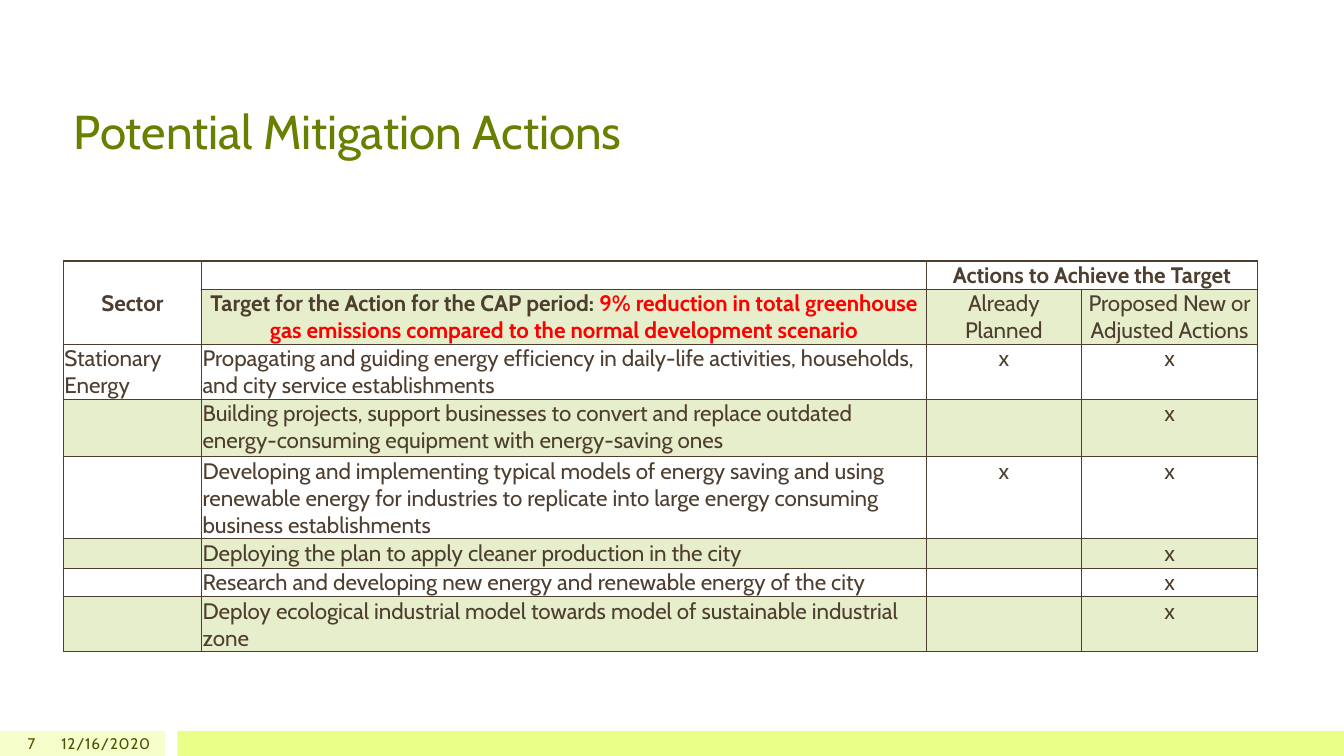
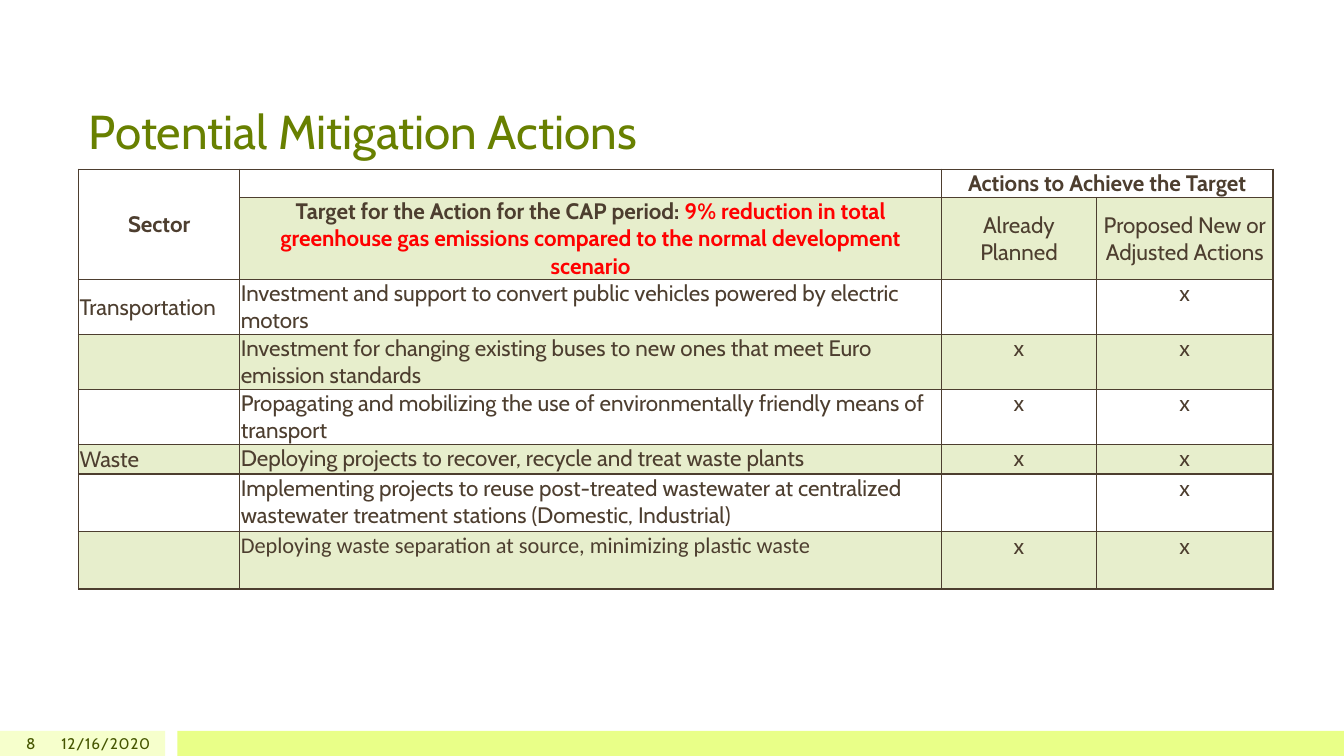
from lxml import etree
from pptx import Presentation
from pptx import util as u
from pptx.dml import color
from pptx.enum import shapes, text
from pptx.oxml import ns

UNIT = 190500
COLUMNS, ROWS = 64, 36
FOOTER_TOP, FOOTER_HEIGHT = 34.8, 1.2
TABLE_WIDTH, PLANNED_WIDTH, PROPOSED_WIDTH = 56.88, 7.39, 8.4
LINE_1, LINE_1_LOOSE, LINE_2, LINE_2_LOOSE, LINE_3 = 1.34, 1.42, 2.62, 2.74, 3.9
LEFT, CENTER, RIGHT = text.PP_ALIGN.LEFT, text.PP_ALIGN.CENTER, text.PP_ALIGN.RIGHT
TOP, MIDDLE, BOTTOM = text.MSO_ANCHOR.TOP, text.MSO_ANCHOR.MIDDLE, text.MSO_ANCHOR.BOTTOM

COLORS = {
    "title": "688000", "footer": "455500", "body": "4D3E2F", "target": "FF0000",
    "band": "8BAA00", "paper": "FFFFFF", "date_bar": "F6FFCC", "footer_bar": "E9FF88",
}

TARGET = [
    ("Target for the Action for the CAP period: ", "body"),
    ("9% reduction in total greenhouse gas emissions compared to the normal development scenario", "target"),
]

ENERGY = [
    ("Stationary Energy", "Propagating and guiding energy efficiency in daily-life activities, households, and city service establishments", "x", LINE_2, {}),
    ("", "Building projects, support businesses to convert and replace outdated energy-consuming equipment with energy-saving ones", "", LINE_2_LOOSE, {}),
    ("", "Developing and implementing typical models of energy saving and using renewable energy for industries to replicate into large energy consuming business establishments", "x", LINE_3, {}),
    ("", "Deploying the plan to apply cleaner production in the city", "", LINE_1_LOOSE, {}),
    ("", "Research and developing new energy and renewable energy of the city", "", LINE_1, {"anchor": BOTTOM}),
    ("", "Deploy ecological industrial model towards model of sustainable industrial zone", "", LINE_2, {}),
]

TRANSPORT_AND_WASTE = [
    ("Transportation", "Investment and support to convert public vehicles powered by electric motors", "", LINE_2, {}),
    ("", "Investment for changing existing buses to new ones that meet Euro emission standards", "x", LINE_2, {}),
    ("", "Propagating and mobilizing the use of environmentally friendly means of transport", "x", LINE_2, {}),
    ("Waste", "Deploying projects to recover, recycle and treat waste plants", "x", LINE_1_LOOSE, {}),
    ("", "Implementing projects to reuse post-treated wastewater at centralized wastewater treatment stations (Domestic, Industrial)", "", LINE_2_LOOSE, {}),
    ("", "Deploying waste separation at source, minimizing plastic waste", "x", LINE_2_LOOSE, {"font": "Calibri"}),
]


def grid(*lengths):
    return [u.Emu(round(length * UNIT)) for length in lengths]


def rgb(name):
    return color.RGBColor.from_string(COLORS[name])


class Deck:
    """Holds the shared style and the slide being built."""

    def __init__(self):
        self.prs = Presentation()
        self.prs.slide_width, self.prs.slide_height = grid(COLUMNS, ROWS)
        self.slide = None

    def new_slide(self, number, date):
        self.slide = self.prs.slides.add_slide(self.prs.slide_layouts[5])
        self.bar(0, 7.87, "date_bar")
        self.bar(8.45, COLUMNS - 8.45, "footer_bar")
        self.footer(0, 2.16, number)
        self.footer(2.4, 5.23, date)

    def style(self, run, size, shade, font="Cabin", bold=False):
        run.font.size, run.font.name, run.font.bold = u.Pt(size), font, bold
        run.font.color.rgb = rgb(shade)

    def bar(self, left, width, shade):
        bar = self.slide.shapes.add_shape(
            shapes.MSO_SHAPE.RECTANGLE, *grid(left, FOOTER_TOP, width, FOOTER_HEIGHT))
        bar.shadow.inherit = False
        bar.fill.solid()
        bar.fill.fore_color.rgb = rgb(shade)
        bar.line.fill.background()

    def footer(self, left, width, words):
        frame = self.slide.shapes.add_textbox(
            *grid(left, FOOTER_TOP, width, FOOTER_HEIGHT)).text_frame
        frame.word_wrap = True
        frame.vertical_anchor = MIDDLE
        frame.margin_top = frame.margin_bottom = 0
        frame.text = words
        paragraph = frame.paragraphs[0]
        paragraph.alignment = RIGHT
        self.style(paragraph.runs[0], 11, "footer")
        paragraph.runs[0]._r.get_or_add_rPr().set("spc", "50")

    def title(self, left, words):
        title = self.slide.shapes.title
        title.left, title.top, title.width, title.height = grid(left, 1.44, 56.62 - left, 6.19)
        frame = title.text_frame
        frame.text = words
        frame.vertical_anchor = BOTTOM
        frame.margin_bottom = u.Inches(0.01)
        frame.paragraphs[0].alignment = LEFT
        self.style(frame.paragraphs[0].runs[0], 34, "title")

    def cell(self, cell, content, banded, align=LEFT, anchor=TOP, font="Cabin", bold=False):
        cell.margin_left = cell.margin_right = cell.margin_top = u.Inches(0.01)
        cell.margin_bottom = 0
        cell.vertical_anchor = anchor
        paragraph = cell.text_frame.paragraphs[0]
        paragraph.alignment = align
        phrases = [(content, "body")] if isinstance(content, str) else content
        for words, shade in phrases:
            if words:
                run = paragraph.add_run()
                run.text = words
                self.style(run, 16, shade, font, bold)
        if not content:
            etree.SubElement(paragraph._p, ns.qn("a:endParaRPr"), sz="1600")
        self.borders(cell)
        cell.fill.solid()
        cell.fill.fore_color.rgb = rgb("band" if banded else "paper")
        if banded:
            tint = cell._tc.tcPr.find(ns.qn("a:solidFill"))
            etree.SubElement(tint[0], ns.qn("a:alpha"), val="20000")

    def borders(self, cell):
        properties = cell._tc.get_or_add_tcPr()
        for side in ("a:lnL", "a:lnR", "a:lnT", "a:lnB"):
            edge = etree.SubElement(properties, ns.qn(side), w=str(u.Pt(1)))
            ink = etree.SubElement(edge, ns.qn("a:solidFill"))
            etree.SubElement(ink, ns.qn("a:srgbClr"), val=COLORS["body"])

    def actions_table(self, left, top, sector_width, actions):
        target_width = TABLE_WIDTH - sector_width - PLANNED_WIDTH - PROPOSED_WIDTH
        heading_height = LINE_2 if target_width > 34 else LINE_3
        heights = [LINE_1, heading_height] + [action[3] for action in actions]
        table = self.slide.shapes.add_table(
            len(heights), 4, *grid(left, top, TABLE_WIDTH, sum(heights))).table
        table.first_row = table.horz_banding = False
        widths = grid(sector_width, target_width, PLANNED_WIDTH, PROPOSED_WIDTH)
        for column, width in zip(table.columns, widths):
            column.width = width
        for row, height in zip(table.rows, grid(*heights)):
            row.height = height

        headings = [
            ["Sector", "", "Actions to Achieve the Target", ""],
            ["", TARGET, "Already Planned", "Proposed New or Adjusted Actions"],
        ]
        for r, labels in enumerate(headings):
            for c, label in enumerate(labels):
                self.cell(table.cell(r, c), label, r == 1 and c > 0, CENTER, MIDDLE,
                          bold=r == 0 or c == 1)
        table.cell(0, 0).merge(table.cell(1, 0))
        table.cell(0, 2).merge(table.cell(0, 3))

        for r, (sector, action, planned, _, look) in enumerate(actions, 2):
            banded = r % 2 == 1
            self.cell(table.cell(r, 0), sector, banded, anchor=MIDDLE)
            self.cell(table.cell(r, 1), action, banded, **look)
            for c, mark in ((2, planned), (3, "x")):
                self.cell(table.cell(r, c), mark, banded, CENTER, look.get("anchor", TOP))


def main():
    deck = Deck()
    for number, left, top, sector_width, actions in (
        ("7", 3.02, 12.43, 6.58, ENERGY),
        ("8", 3.74, 8.06, 7.68, TRANSPORT_AND_WASTE),
    ):
        deck.new_slide(number, "12/16/2020")
        deck.title(left, "Potential Mitigation Actions")
        deck.actions_table(left, top, sector_width, actions)
    deck.prs.save("out.pptx")


if __name__ == "__main__":
    main()
